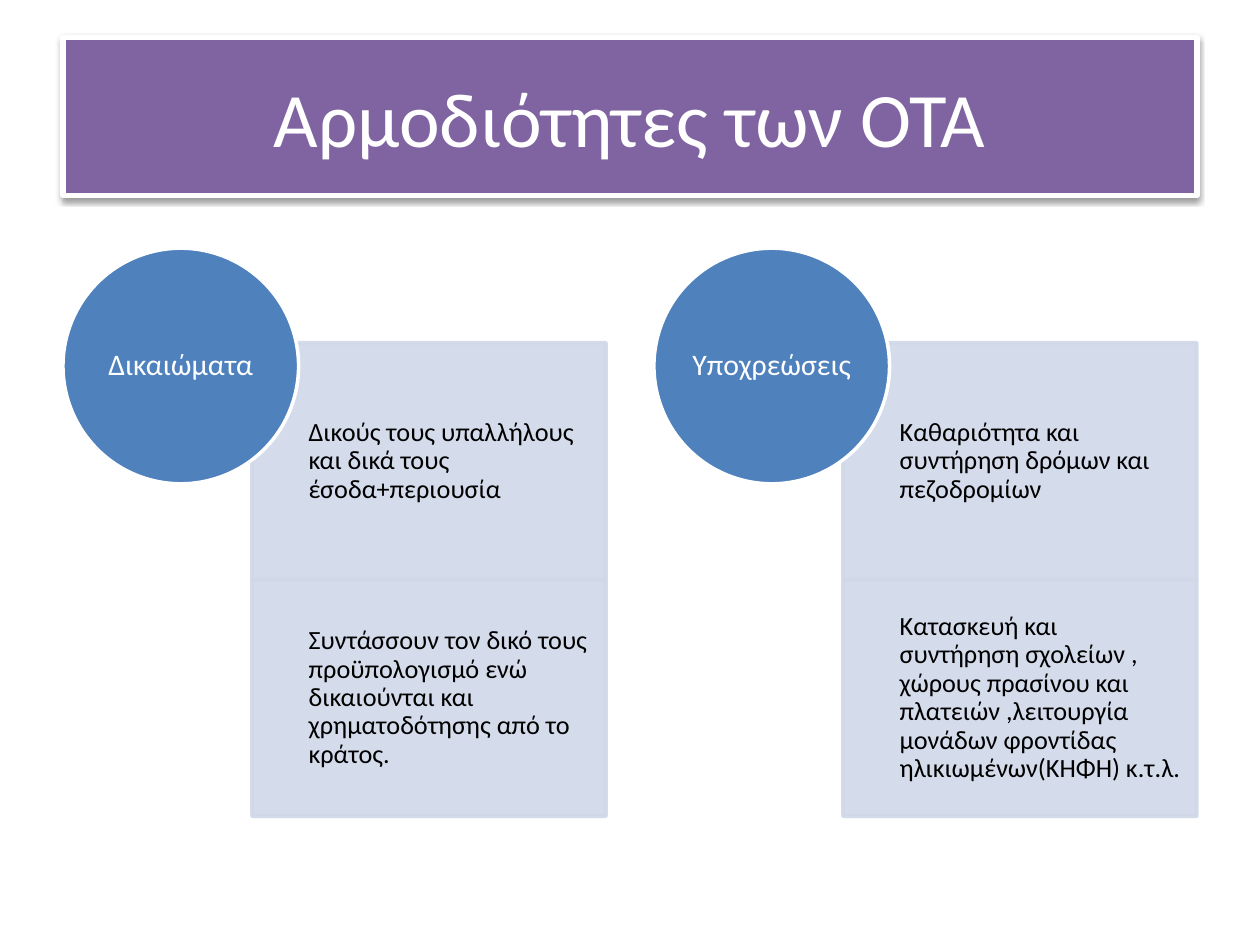
import pptx
import pptx.util
import pptx.dml.color
import pptx.enum.shapes
import pptx.enum.text
import pptx.oxml
import pptx.oxml.ns
import lxml.etree

Inches = pptx.util.Inches
Pt = pptx.util.Pt
RGBColor = pptx.dml.color.RGBColor
Shapes = pptx.enum.shapes.MSO_SHAPE
Align = pptx.enum.text.PP_ALIGN

# Content
TITLE = "Αρμοδιότητες των ΟΤΑ"
COLUMNS = [
    ("Δικαιώματα", [
        "Δικούς τους υπαλλήλους και δικά τους έσοδα+περιουσία",
        "Συντάσσουν τον δικό τους προϋπολογισμό ενώ δικαιούνται και "
        "χρηματοδότησης από το κράτος.",
    ]),
    ("Υποχρεώσεις", [
        "Καθαριότητα και συντήρηση δρόμων και πεζοδρομίων",
        "Κατασκευή και συντήρηση σχολείων , χώρους πρασίνου και πλατειών "
        ",λειτουργία μονάδων φροντίδας ηλικιωμένων(ΚΗΦΗ) κ.τ.λ.",
    ]),
]

# Style
FONT = "Calibri"
WHITE = RGBColor(0xFF, 0xFF, 0xFF)
BLACK = RGBColor(0x00, 0x00, 0x00)
PURPLE = RGBColor(0x80, 0x64, 0xA2)
BLUE = RGBColor(0x4F, 0x81, 0xBD)
PALE = RGBColor(0xD0, 0xD8, 0xE8)

# Layout, in inches
LEFT, COLUMN_STEP = 0.5, 4.69
CIRCLE_TOP, CIRCLE_SIZE = 1.97, 1.87
PANEL_INDENT, PANEL_TOP = 1.5, 2.72
PANEL_WIDTH, PANEL_HEIGHT = 2.81, 1.88


def add_box(page, kind, place, fill, line, weight):
    box = page.shapes.add_shape(kind, *map(Inches, place))
    box.shadow.inherit = False
    box.fill.solid()
    box.fill.fore_color.rgb = fill
    box.line.color.rgb = line
    box.line.width = Pt(weight)
    return box


def write(box, text, size, color, align, margins, spacing=None):
    frame = box.text_frame
    frame.word_wrap = True
    frame.vertical_anchor = pptx.enum.text.MSO_ANCHOR.MIDDLE
    (frame.margin_left, frame.margin_top,
     frame.margin_right, frame.margin_bottom) = map(Inches, margins)
    para = frame.paragraphs[0]
    para.alignment = align
    para.line_spacing = spacing
    span = para.add_run()
    span.text = text
    span.font.name = FONT
    span.font.size = Pt(size)
    span.font.color.rgb = color


def set_opacity(box, percent):
    for color in box._element.spPr.iter(pptx.oxml.ns.qn("a:srgbClr")):
        alpha = lxml.etree.SubElement(color, pptx.oxml.ns.qn("a:alpha"))
        alpha.set("val", str(percent * 1000))


def add_shadow(box):
    effects = box._element.spPr.find(pptx.oxml.ns.qn("a:effectLst"))
    effects.append(pptx.oxml.parse_xml(
        f'<a:outerShdw {pptx.oxml.ns.nsdecls("a")} blurRad="{Pt(3.1)}" '
        f'dist="{Pt(1.6)}" dir="5400000" rotWithShape="0">'
        '<a:srgbClr val="000000"><a:alpha val="38000"/></a:srgbClr>'
        '</a:outerShdw>'))


def main():
    deck = pptx.Presentation()
    deck.slide_width, deck.slide_height = Inches(10), Inches(7.5)
    page = deck.slides.add_slide(deck.slide_layouts[6])

    # Title band
    band = add_box(page, Shapes.RECTANGLE, (LEFT, 0.3, 9, 1.25), PURPLE, WHITE, 3)
    add_shadow(band)
    write(band, TITLE, 44, WHITE, Align.CENTER, (0.1, 0.05, 0.1, 0.05))

    for column, (heading, items) in enumerate(COLUMNS):
        left = LEFT + column * COLUMN_STEP

        # Stacked panels
        for row, item in enumerate(items):
            place = (left + PANEL_INDENT, PANEL_TOP + row * PANEL_HEIGHT,
                     PANEL_WIDTH, PANEL_HEIGHT)
            panel = add_box(page, Shapes.RECTANGLE, place, PALE, PALE, 2)
            set_opacity(panel, 90)
            write(panel, item, 15, BLACK, Align.LEFT,
                  (0.45, 0.12, 0.12, 0.12), 0.9)

        # Heading circle over the panels' corner
        circle = add_box(page, Shapes.OVAL,
                         (left, CIRCLE_TOP, CIRCLE_SIZE, CIRCLE_SIZE),
                         BLUE, WHITE, 2)
        write(circle, heading, 17, WHITE, Align.CENTER, (0, 0, 0, 0), 0.9)

    deck.save("out.pptx")


if __name__ == "__main__":
    main()
